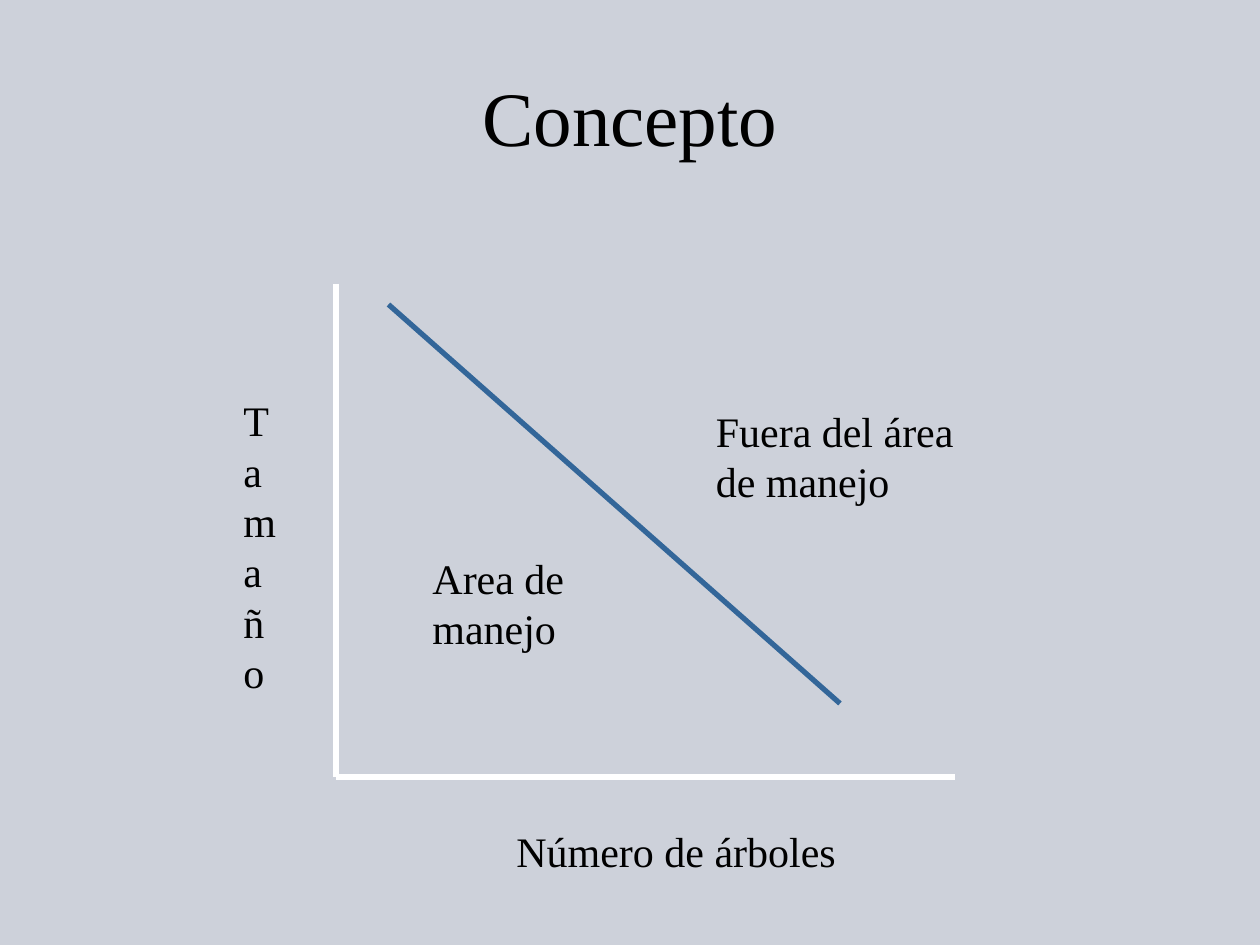
from pptx import Presentation
from pptx.dml.color import RGBColor
from pptx.enum import shapes, text
from pptx.oxml import ns, xmlchemy
from pptx.util import Pt

FONT = "Times New Roman"
COLORS = {
    "background": "CDD1DA",
    "text": "000000",
    "axis": "FFFFFF",
    "limit": "336699",
}


def color(name):
    return RGBColor.from_string(COLORS[name])


def add_text(s, content, left, top, width, height, size=24,
             align=text.PP_ALIGN.LEFT, anchor=text.MSO_ANCHOR.TOP):
    sp = s.shapes.add_textbox(Pt(left), Pt(top), Pt(width), Pt(height))
    tf = sp.text_frame
    tf.word_wrap = True
    tf.vertical_anchor = anchor
    p = tf.paragraphs[0]
    p.alignment = align
    r = p.add_run()
    r.text = content
    r.font.name = FONT
    r.font.size = Pt(size)
    r.font.color.rgb = color("text")


def add_line(parent, start, end, color_name):
    """Draw a 3 pt line on a slide or inside a group."""
    line = parent.shapes.add_connector(
        shapes.MSO_CONNECTOR.STRAIGHT, *map(Pt, start + end))
    line.line.width = Pt(3)
    line.line.color.rgb = color(color_name)
    line._element.spPr.append(xmlchemy.OxmlElement("a:effectLst"))


def add_axes(s, origin, top, right):
    axes = s.shapes.add_group_shape()
    x, y = origin
    add_line(axes, (x, top), origin, "axis")
    add_line(axes, origin, (right, y), "axis")


def main():
    prs = Presentation()
    prs.slide_width, prs.slide_height = Pt(720), Pt(540)
    s = prs.slides.add_slide(prs.slide_layouts[6])
    s.background.fill.solid()
    s.background.fill.fore_color.rgb = color("background")

    add_text(s, "Concepto", 54, 30, 612, 72, size=44,
             align=text.PP_ALIGN.CENTER, anchor=text.MSO_ANCHOR.MIDDLE)
    add_axes(s, origin=(192, 444), top=162, right=546)
    add_text(s, "Tamaño", 132, 222, 24, 211)
    add_text(s, "Número de árboles", 288, 468, 230, 36)
    add_line(s, (222, 174), (480, 402), "limit")
    add_text(s, "Area de manejo", 240, 312, 109, 65.5)
    add_text(s, "Fuera del área de manejo", 402, 228, 177, 65.5)
    prs.save("out.pptx")


if __name__ == "__main__":
    main()
